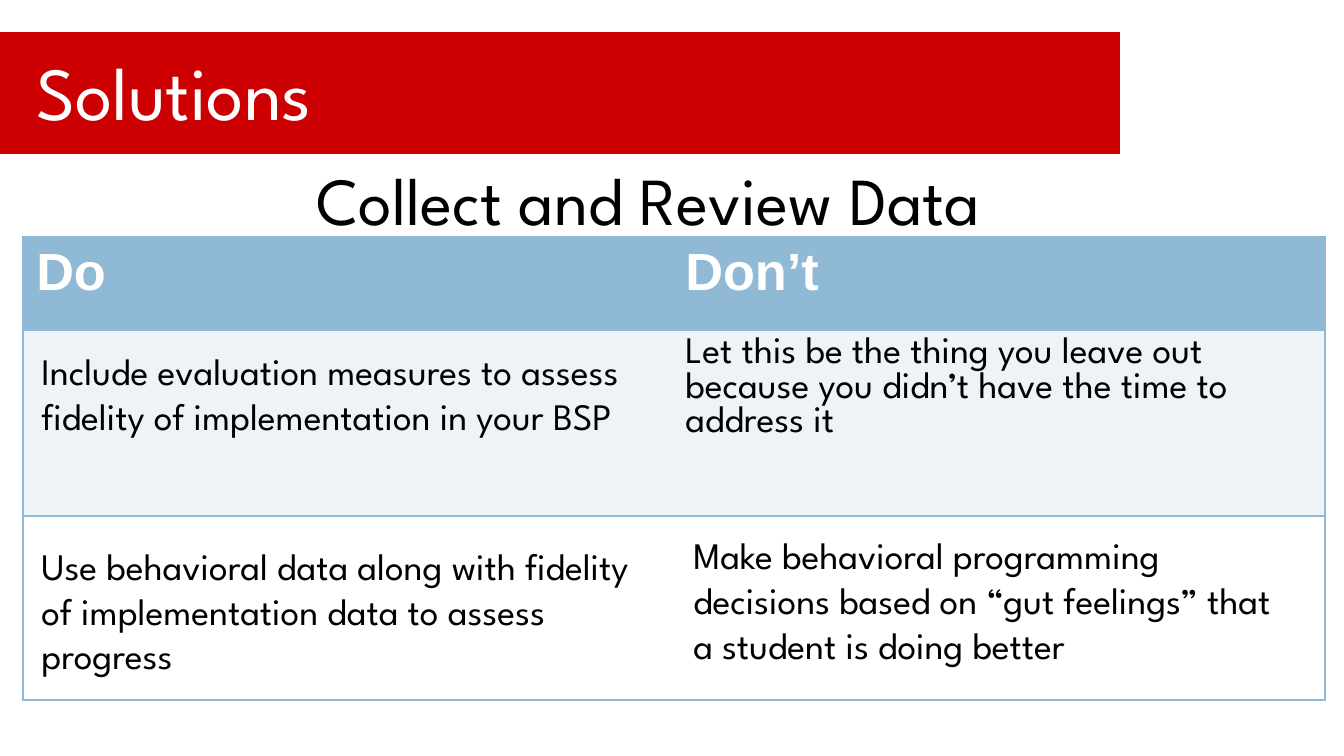
from lxml import etree
from pptx import Presentation
from pptx import util as u
from pptx.dml.color import RGBColor
from pptx.enum import shapes, text
from pptx.oxml.ns import qn

RED = RGBColor(0xCC, 0x00, 0x00)
BLUE = RGBColor(0x8F, 0xB9, 0xD4)
PALE = RGBColor(0xEE, 0xF3, 0xF7)
WHITE = RGBColor(0xFF, 0xFF, 0xFF)
BLACK = RGBColor(0, 0, 0)
SPARTAN, ARIAL = "League Spartan", "Arial"

WIDTH = 10
HEIGHT = WIDTH * 9 / 16

# Table content: None marks a cell whose text sits in its own box
ROWS = [
    ("Do", "Don’t"),
    (None, "Let this be the thing you leave out because you didn’t have the time to address it"),
    (None, None),
]
ROW_FILLS = [BLUE, PALE, WHITE]
COLS, HEIGHTS = [4.83, 4.86], [0.7, 1.38, 1.37]
TABLE_LEFT, TABLE_TOP = 0.17, 1.76

HEADER = {"size": u.Pt(28), "name": ARIAL, "bold": True}
BODY = {"size": u.Pt(20), "name": SPARTAN, "bold": False}

# Text, (left, top, width, height), size, colour, vertical inset, extra left inset
BOXES = [
    ("Solutions", (0.17, 0.27, 9.47, 0.81), 40, WHITE, 0.1, 0),
    ("Collect and Review Data", (0, 1.08, 9.5, 4.23), 36, BLACK, 0.1, 0.15),
    ("Include evaluation measures to assess fidelity of implementation in your BSP",
     (0.21, 2.54, 4.82, 1.11), 20, BLACK, 0.05, 0),
    ("Use behavioral data along with fidelity of implementation data to assess progress",
     (0.21, 3.94, 4.73, 1.02), 20, BLACK, 0.1, 0),
    ("Make behavioral programming decisions based on “gut feelings” that a student is doing better",
     (5.06, 3.86, 4.58, 1.18), 20, BLACK, 0.1, 0),
]
ANCHORS = {"Solutions": text.MSO_ANCHOR.MIDDLE}
ALIGNS = {"Collect and Review Data": text.PP_ALIGN.CENTER}


def inches(values):
    return [u.Inches(v) for v in values]


def write(p, words, color, font):
    r = p.add_run()
    r.text = words
    for key, value in font.items():
        setattr(r.font, key, value)
    r.font.color.rgb = color


def set_borders(cell, sides):
    """Draw the named sides in blue and hide the others."""
    props = cell._tc.get_or_add_tcPr()
    for i, side in enumerate("LRTB"):
        ln = etree.Element(qn("a:ln" + side), w=str(u.Pt(1)))
        if side in sides:
            fill = etree.SubElement(ln, qn("a:solidFill"))
            etree.SubElement(fill, qn("a:srgbClr"), val=str(BLUE))
        else:
            etree.SubElement(ln, qn("a:noFill"))
        props.insert(i, ln)


def add_box(slide, words, place, size, color, inset, indent):
    tf = slide.shapes.add_textbox(*inches(place)).text_frame
    layout = {
        "word_wrap": True,
        "vertical_anchor": ANCHORS.get(words, text.MSO_ANCHOR.TOP),
        "margin_left": u.Inches(0.1 + indent),
        "margin_right": u.Inches(0.1),
        "margin_top": u.Inches(inset),
        "margin_bottom": u.Inches(inset),
    }
    for key, value in layout.items():
        setattr(tf, key, value)
    p = tf.paragraphs[0]
    p.alignment = ALIGNS.get(words, text.PP_ALIGN.LEFT)
    write(p, words, color, {"size": u.Pt(size), "name": SPARTAN})


def add_banner(slide):
    sp = slide.shapes.add_shape(shapes.MSO_SHAPE.RECTANGLE, *inches((-0.08, 0.23, 8.42, 0.92)))
    sp.shadow.inherit = False
    sp.fill.solid()
    sp.fill.fore_color.rgb = RED
    sp.line.color.rgb = WHITE
    sp.line.width = u.Pt(0.75)


def add_grid(slide):
    place = inches((TABLE_LEFT, TABLE_TOP, sum(COLS), sum(HEIGHTS)))
    table = slide.shapes.add_table(len(ROWS), len(COLS), *place).table
    for col, width in zip(table.columns, COLS):
        col.width = u.Inches(width)
    for i, (words, fill, height) in enumerate(zip(ROWS, ROW_FILLS, HEIGHTS)):
        table.rows[i].height = u.Inches(height)
        for j, entry in enumerate(words):
            cell = table.cell(i, j)
            cell.fill.solid()
            cell.fill.fore_color.rgb = fill
            set_borders(cell, "LTB" if j == 0 else "RTB")
            if entry:
                font, color = (HEADER, WHITE) if i == 0 else (BODY, BLACK)
                write(cell.text_frame.paragraphs[0], entry, color, font)


def main():
    prs = Presentation()
    prs.slide_width, prs.slide_height = inches((WIDTH, HEIGHT))
    slide = prs.slides.add_slide(prs.slide_layouts[6])
    add_banner(slide)
    for box in BOXES[:2]:
        add_box(slide, *box)
    add_grid(slide)
    for box in BOXES[2:]:
        add_box(slide, *box)
    prs.save("out.pptx")


if __name__ == "__main__":
    main()
